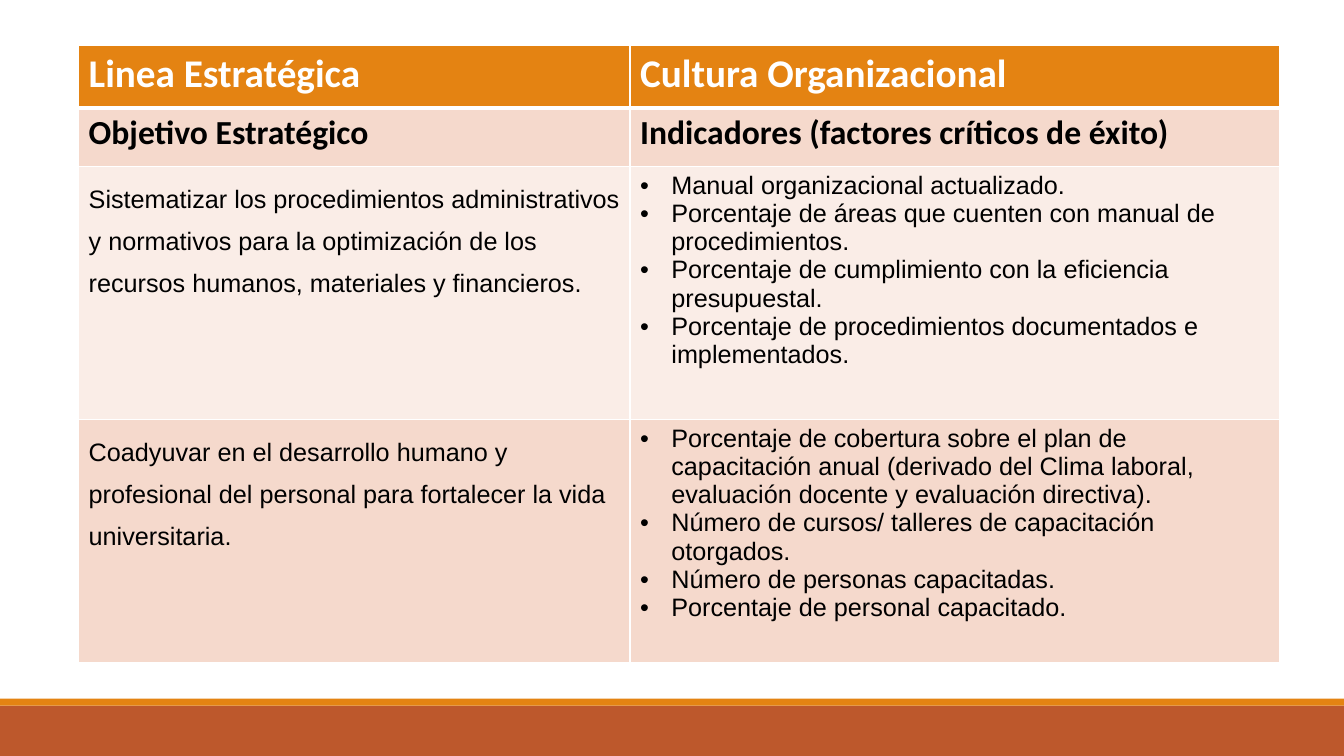
from dataclasses import dataclass

from lxml.etree import SubElement
from pptx import Presentation
from pptx.dml.color import RGBColor
from pptx.enum.shapes import MSO_SHAPE as Preset
from pptx.oxml.ns import qn
from pptx.slide import Slide
from pptx.table import _Cell as Cell
from pptx.util import Emu, Inches, Pt

WHITE = RGBColor(0xFF, 0xFF, 0xFF)
BLACK = RGBColor(0x00, 0x00, 0x00)
ORANGE = RGBColor(0xE4, 0x83, 0x12)
RUST = RGBColor(0xBD, 0x58, 0x2C)
PEACH = RGBColor(0xF5, 0xD9, 0xCC)
BLUSH = RGBColor(0xFA, 0xED, 0xE7)

SLIDE_WIDTH = Inches(13.33)
SLIDE_HEIGHT = Inches(7.5)
BULLET_INDENT = Inches(0.31)


@dataclass(frozen=True)
class TextStyle:
    font: str
    size: int
    color: RGBColor
    bold: bool = False
    spacing: float = 1.0
    bulleted: bool = False


@dataclass(frozen=True)
class PlanRow:
    height: float
    fill: RGBColor
    texts: tuple[str, str]
    styles: tuple[TextStyle, TextStyle]
    bottom_rule: int = 1


@dataclass(frozen=True)
class FooterBand:
    top: float
    height: float
    color: RGBColor


STRATEGY = TextStyle("Calibri", 28, WHITE, bold=True)
HEADING = TextStyle("Calibri", 24, BLACK, bold=True)
OBJECTIVE = TextStyle("Arial", 18, BLACK, spacing=1.5)
INDICATORS = TextStyle("Arial", 18, BLACK, bulleted=True)

TABLE_LEFT, TABLE_TOP = 5.85, 6.0
COLUMN_WIDTHS = (41.03, 48.31)

PLAN = (
    PlanRow(8.27, ORANGE, ("Linea Estratégica", "Cultura Organizacional"),
            (STRATEGY, STRATEGY), bottom_rule=3),
    PlanRow(7.73, PEACH,
            ("Objetivo Estratégico", "Indicadores (factores críticos de éxito)"),
            (HEADING, HEADING)),
    PlanRow(33.47, BLUSH, (
        "Sistematizar los procedimientos administrativos y normativos para la "
        "optimización de los recursos humanos, materiales y financieros.",
        "Manual organizacional actualizado.\n"
        "Porcentaje de áreas que cuenten con manual de procedimientos.\n"
        "Porcentaje de cumplimiento con la eficiencia presupuestal.\n"
        "Porcentaje de procedimientos documentados e implementados.",
    ), (OBJECTIVE, INDICATORS)),
    PlanRow(32.13, PEACH, (
        "Coadyuvar en el desarrollo humano y profesional del personal para "
        "fortalecer la vida universitaria.",
        "Porcentaje de cobertura sobre el plan de capacitación anual (derivado "
        "del Clima laboral, evaluación docente y evaluación directiva).\n"
        "Número de cursos/ talleres de capacitación otorgados.\n"
        "Número de personas capacitadas.\n"
        "Porcentaje de personal capacitado.",
    ), (OBJECTIVE, INDICATORS)),
)

FOOTER = (FooterBand(93.33, 6.67, RUST), FooterBand(92.4, 0.93, ORANGE))


def across(percent: float) -> Emu:
    return Emu(round(SLIDE_WIDTH * percent / 100))


def down(percent: float) -> Emu:
    return Emu(round(SLIDE_HEIGHT * percent / 100))


def draw_band(slide: Slide, band: FooterBand) -> None:
    stripe = slide.shapes.add_shape(
        Preset.RECTANGLE, 0, down(band.top), SLIDE_WIDTH, down(band.height))
    stripe.shadow.inherit = False
    stripe.fill.solid()
    stripe.fill.fore_color.rgb = band.color
    stripe.line.fill.background()


def rule_cell(cell: Cell, top: int, bottom: int) -> None:
    properties = cell._tc.get_or_add_tcPr()
    widths = {"a:lnL": 1, "a:lnR": 1, "a:lnT": top, "a:lnB": bottom}
    for position, (tag, width) in enumerate(widths.items()):
        rule = SubElement(properties, qn(tag), w=str(Pt(width)))
        properties.insert(position, rule)
        paint = SubElement(rule, qn("a:solidFill"))
        SubElement(paint, qn("a:srgbClr"), val=str(WHITE))


def write_cell(cell: Cell, text: str, style: TextStyle) -> None:
    cell.text_frame.text = text
    for paragraph in cell.text_frame.paragraphs:
        paragraph.line_spacing = style.spacing
        if style.bulleted:
            properties = paragraph._p.get_or_add_pPr()
            properties.set("marL", str(BULLET_INDENT))
            properties.set("indent", str(-BULLET_INDENT))
            SubElement(properties, qn("a:buFont"), typeface="Arial")
            SubElement(properties, qn("a:buChar"), char="•")
        for run in paragraph.runs:
            run.font.name = style.font
            run.font.size = Pt(style.size)
            run.font.bold = style.bold
            run.font.color.rgb = style.color


def draw_plan(slide: Slide) -> None:
    table = slide.shapes.add_table(
        len(PLAN), len(COLUMN_WIDTHS), across(TABLE_LEFT), down(TABLE_TOP),
        across(sum(COLUMN_WIDTHS)), down(sum(row.height for row in PLAN))).table
    for column, width in zip(table.columns, COLUMN_WIDTHS):
        column.width = across(width)
    rule_above = 1
    for line, row in zip(table.rows, PLAN):
        line.height = down(row.height)
        for cell, text, style in zip(line.cells, row.texts, row.styles):
            cell.fill.solid()
            cell.fill.fore_color.rgb = row.fill
            rule_cell(cell, rule_above, row.bottom_rule)
            write_cell(cell, text, style)
        rule_above = row.bottom_rule


def main() -> None:
    deck = Presentation()
    deck.slide_width = SLIDE_WIDTH
    deck.slide_height = SLIDE_HEIGHT
    slide = deck.slides.add_slide(deck.slide_layouts.get_by_name("Blank"))
    for band in FOOTER:
        draw_band(slide, band)
    draw_plan(slide)
    deck.save("out.pptx")


if __name__ == "__main__":
    main()
